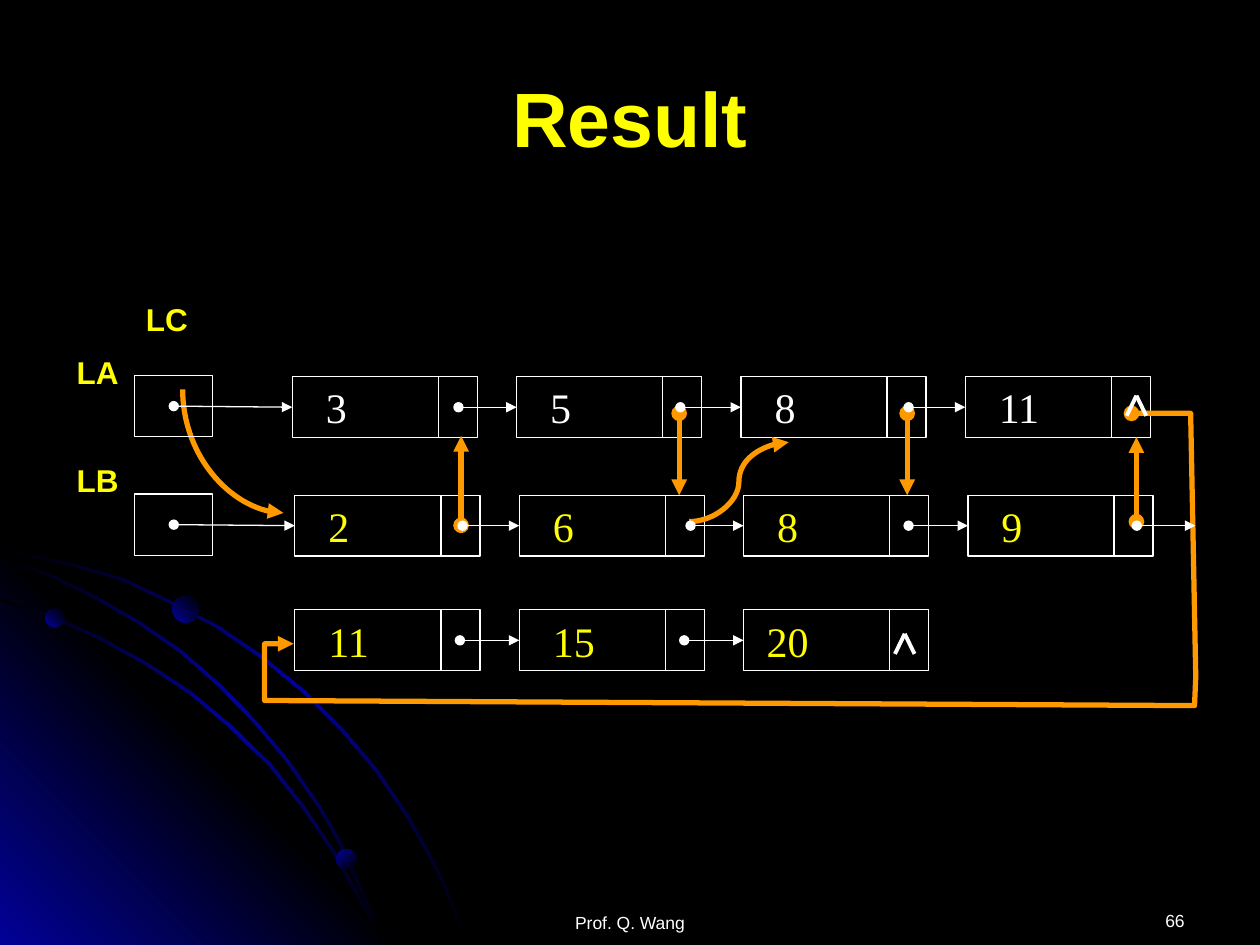
from collections import namedtuple

from lxml import etree
from pptx import Presentation
from pptx.dml.color import RGBColor
from pptx.enum.shapes import MSO_CONNECTOR, MSO_SHAPE
from pptx.enum.text import MSO_ANCHOR, PP_ALIGN
from pptx.oxml.ns import qn
from pptx.util import Pt

BLACK = RGBColor(0x00, 0x00, 0x00)
WHITE = RGBColor(0xFF, 0xFF, 0xFF)
YELLOW = RGBColor(0xFF, 0xFF, 0x00)
ORANGE = RGBColor(0xFF, 0x99, 0x00)
BLUE = RGBColor(0x01, 0x01, 0x99)

STRAIGHT, CURVE = MSO_CONNECTOR.STRAIGHT, MSO_CONNECTOR.CURVE
RECTANGLE, OVAL = MSO_SHAPE.RECTANGLE, MSO_SHAPE.OVAL
TOP, MIDDLE = MSO_ANCHOR.TOP, MSO_ANCHOR.MIDDLE
LEFT, CENTER, RIGHT = PP_ALIGN.LEFT, PP_ALIGN.CENTER, PP_ALIGN.RIGHT
LEFT_SIDE = 1

Box = namedtuple("Box", "left top width height")

NODE_WIDTH, NODE_HEIGHT, NODE_PITCH = 105.8, 34.8, 128.2
DIVIDER, ARROW_LENGTH = 83.5, 33.5

# Upper edges of the backdrop's curved bands
BANDS = [
    [(0, 313.2), (20, 317.5), (41, 321.8), (70.6, 330.5), (97.9, 343.4),
     (125.3, 357.8), (150.5, 375.1), (174.2, 394.6), (195.8, 416.2), (216, 440),
     (234, 466.6), (244.1, 484.6), (253.4, 502.6), (260.6, 520.6), (267.8, 539.3)],
    [(0, 342), (29.5, 351.4), (56.9, 363.6), (84.2, 378.7), (109.4, 395.3),
     (132.5, 414.7), (154.8, 436.3), (174.2, 460.8), (191.5, 486.7),
     (205.9, 512.6), (213.1, 525.6), (218.2, 539.3)],
    [(0, 318.2), (28.1, 327.6), (54.7, 340.6), (79.9, 355), (103.7, 371.5),
     (126, 391), (146.9, 412.6), (164.9, 434.2), (182.9, 460.1), (193.7, 478.8),
     (203, 499), (211.7, 518.4), (218.2, 539.3)],
]


def write(shape, text, font, size, color, bold=False, align=LEFT, anchor=MIDDLE):
    frame = shape.text_frame
    frame.word_wrap = True
    frame.vertical_anchor = anchor
    frame.text = text
    paragraph = frame.paragraphs[0]
    paragraph.alignment = align
    run_font = paragraph.runs[0].font
    run_font.name, run_font.size, run_font.bold = font, Pt(size), bold
    run_font.color.rgb = color


def add_text(slide, box, text, size, color, **style):
    shape = slide.shapes.add_textbox(*map(Pt, box))
    write(shape, text, "Arial", size, color, **style)
    return shape


def style_line(shape, color, width, head=None, tail=None):
    shape.line.color.rgb = color
    shape.line.width = Pt(width)
    line = shape.line._get_or_add_ln()
    for tag, kind in (("a:headEnd", head), ("a:tailEnd", tail)):
        if kind:
            etree.SubElement(line, qn(tag), type=kind)


def add_line(slide, start, end, color=WHITE, width=0.75, head=None, tail=None,
             kind=STRAIGHT):
    connector = slide.shapes.add_connector(kind, *map(Pt, (*start, *end)))
    style_line(connector, color, width, head, tail)
    etree.SubElement(connector._element.spPr, qn("a:effectLst"))
    return connector


def add_rectangle(slide, box):
    shape = slide.shapes.add_shape(RECTANGLE, *map(Pt, box))
    shape.shadow.inherit = False
    shape.fill.background()
    style_line(shape, WHITE, 0.75)
    return shape


def add_freeform(slide, points, close):
    points = [(Pt(x), Pt(y)) for x, y in points]
    builder = slide.shapes.build_freeform(*points[0])
    builder.add_line_segments(points[1:], close=close)
    shape = builder.convert_to_shape()
    shape.shadow.inherit = False
    return shape


def fill_gradient(shape, colors, angle):
    """Spread the colours evenly; the angle is counted anticlockwise."""
    shape.line.fill.background()
    shape.fill.gradient()
    shape.fill.gradient_angle = angle
    stops = shape._element.spPr.find(qn("a:gradFill")).find(qn("a:gsLst"))
    for stop in list(stops):
        stops.remove(stop)
    for index, color in enumerate(colors):
        position = index * 100000 // (len(colors) - 1)
        stop = etree.SubElement(stops, qn("a:gs"), pos=str(position))
        etree.SubElement(stop, qn("a:srgbClr"), val=str(color))


def draw_backdrop(slide, box):
    def add_band(edge):
        lower = [(max(x - 1.2, 0), min(y + 1.2, box.height)) for x, y in reversed(edge)]
        outline = [(box.left + x, box.top + y) for x, y in edge + lower]
        fill_gradient(add_freeform(slide, outline, True), (BLACK, BLUE, BLACK), 315)

    # Corner glow behind the second and third bands
    add_band(BANDS[0])
    bottom = box.top + box.height
    corner = [(box.left + 232, bottom), (box.left, bottom), (box.left, bottom - 232.5)]
    fill_gradient(add_freeform(slide, corner, True), (BLUE, BLACK, BLUE), 45)
    for edge in BANDS[1:]:
        add_band(edge)

    # Beads
    for x, y, size, angle in ((25.9, 347.8, 10.8, 45), (192.2, 485.3, 11.5, 315),
                              (98.6, 340.6, 15.1, 45)):
        bead = slide.shapes.add_shape(
            OVAL, *map(Pt, (box.left + x, box.top + y, size, size)))
        bead.shadow.inherit = False
        fill_gradient(bead, (BLUE, BLACK), angle)


def draw_nodes(slide, box, values, color):
    nodes = []
    for index, (value, margin) in enumerate(values):
        left = box.left + index * NODE_PITCH
        node = add_rectangle(slide, Box(left, box.top, NODE_WIDTH, box.height))
        write(node, value, "Times New Roman", 24, color)
        node.text_frame.margin_left = Pt(margin)
        divider = left + DIVIDER
        add_line(slide, (divider, box.top), (divider, box.top + box.height))
        nodes.append(node)
    return nodes


def draw_pointers(slide, box, nodes, offsets):
    """Point from each node to the next; offsets are the starts within a node."""
    middle = box.top + box.height / 2
    for index, offset in enumerate(offsets):
        x = box.left + index * NODE_PITCH + offset
        arrow = add_line(slide, (x, middle), (x + ARROW_LENGTH, middle),
                         head="oval", tail="triangle")
        if index + 1 < len(nodes):
            arrow.end_connect(nodes[index + 1], LEFT_SIDE)


def draw_head(slide, box, first_node):
    add_rectangle(slide, box)
    middle = box.top + box.height / 2
    arrow = add_line(slide, (box.left + box.width / 2, middle),
                     (box.left + 90, middle), head="oval", tail="triangle")
    arrow.end_connect(first_node, LEFT_SIDE)


def draw_relinks(slide, box):
    orange = dict(color=ORANGE, width=3, tail="triangle")

    def place(x, y):
        return box.left + x, box.top + y

    # Vertical links between the lists
    for x, start, end in ((352.1, 68.2, 115), (482.4, 68.2, 115),
                          (227.5, 132.2, 81.1), (613.4, 130.1, 81.8)):
        add_line(slide, place(x, start), place(x, end), head="oval", **orange)

    # Link from the last node round to the remaining nodes
    route = [(610.6, 68.2), (644.4, 68.2), (647.3, 218.6), (646.6, 235.2),
             (115.2, 232.3), (115.2, 199.9), (131.8, 199.9)]
    path_shape = add_freeform(slide, [place(*point) for point in route], False)
    path_shape.fill.background()
    style_line(path_shape, head="oval", **orange)

    # Curved links: head of LC, then 6 to 8
    curve = add_line(slide, place(132.5, 61), place(61.9, 118.6), kind=CURVE, **orange)
    properties = curve._element.spPr
    properties.find(qn("a:xfrm")).set("rot", str(270 * 60000))
    properties.find(qn("a:prstGeom")).set("prst", "curvedConnector2")
    add_line(slide, place(357.8, 130.1), place(414.7, 84.7), kind=CURVE, **orange)


def draw_lists(slide, box):
    wide, narrow = 19.2, 13.2
    rows = [
        (131, 47.3, WHITE, [("3", wide), ("5", wide), ("8", wide), ("11", wide)],
         (95, 93.6, 95.8)),
        (132.5, 115, YELLOW, [("2", wide), ("6", wide), ("8", wide), ("9", wide)],
         (95.8, 97.9, 94.3, 96.5)),
        (132.5, 180.5, YELLOW, [("11", wide), ("15", wide), ("20", narrow)],
         (94.3, 94.3)),
    ]
    drawn = []
    for left, top, color, values, offsets in rows:
        row = Box(box.left + left, box.top + top, NODE_PITCH * len(values), NODE_HEIGHT)
        drawn.append((row, draw_nodes(slide, row, values, color), offsets))
    draw_relinks(slide, box)
    for row, nodes, offsets in drawn:
        draw_pointers(slide, row, nodes, offsets)
    for row, nodes, _ in drawn[:2]:
        draw_head(slide, Box(box.left + 41, row.top - 0.7, 44.6, 35), nodes[0])

    # End-of-list marks
    for x, y in ((481, 194.2), (613.4, 58.1)):
        apex = (box.left + x, box.top + y)
        for side in (-5.6, 5.6):
            add_line(slide, (apex[0] + side, apex[1] + 11.5), apex, width=2.25)

    # List names
    for name, x, y in (("LA", 0.7, 30), ("LB", 0.7, 92), ("LC", 40.3, 0)):
        add_text(slide, Box(box.left + x, box.top + y, 40, 28.8), name, 18, YELLOW,
                 bold=True, anchor=TOP)


def draw_footer(slide, box):
    for text, x, y, width, align in (("Prof. Q. Wang", 210, 1.4, 228, CENTER),
                                     ("66", 480, 0, 168, RIGHT)):
        shape = add_text(slide, Box(box.left + x, box.top + y, width, box.height),
                         text, 10, WHITE, align=align, anchor=TOP)
        shape.text_frame.margin_top = Pt(15.1)


def main():
    presentation = Presentation()
    presentation.slide_width, presentation.slide_height = Pt(720), Pt(540)
    slide = presentation.slides.add_slide(presentation.slide_layouts[6])
    slide.background.fill.solid()
    slide.background.fill.fore_color.rgb = BLACK
    draw_backdrop(slide, Box(0, 0, 720, 540))
    draw_lists(slide, Box(36, 168, 648, 240))
    add_text(slide, Box(36, 21.6, 648, 90), "Result", 44, YELLOW, bold=True, align=CENTER)
    draw_footer(slide, Box(36, 504.7, 648, 36))
    presentation.save("out.pptx")


if __name__ == "__main__":
    main()
